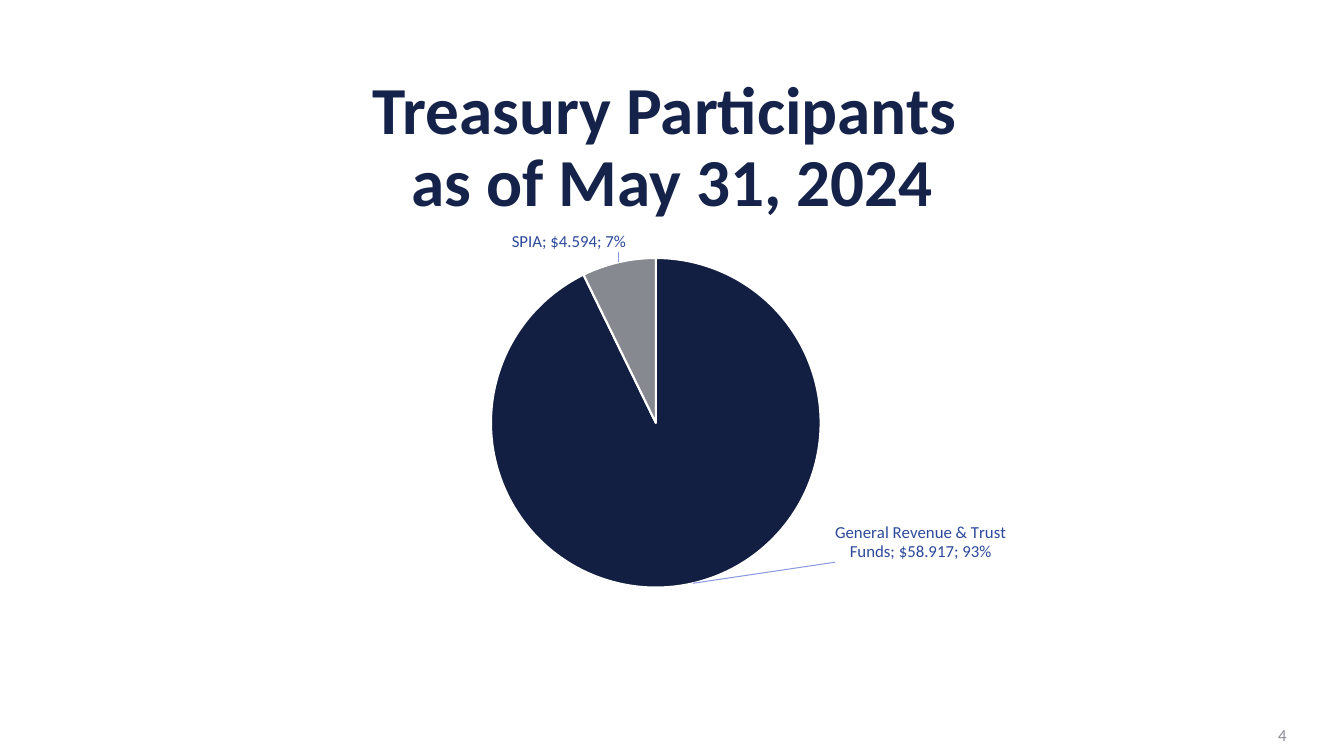
from pptx import Presentation
from pptx.chart.data import CategoryChartData
from pptx.dml.color import RGBColor
from pptx.enum.chart import XL_CHART_TYPE, XL_LABEL_POSITION
from pptx.enum.text import MSO_ANCHOR, PP_ALIGN
from pptx.oxml import parse_xml
from pptx.oxml.ns import nsdecls
from pptx.util import Inches, Pt

PIE = XL_CHART_TYPE.PIE
BEST_FIT = XL_LABEL_POSITION.BEST_FIT
MIDDLE = MSO_ANCHOR.MIDDLE
CENTER, RIGHT = PP_ALIGN.CENTER, PP_ALIGN.RIGHT

FONT = "Calibri"
COLORS = {"title": "15234A", "funds": "131F42", "spia": "878991",
          "label": "2C499B", "leader": "8C9BE0", "number": "8C8D96",
          "white": "FFFFFF"}

# name, value in billions, share, colour, label shift and label size
# (both as shares of the chart)
PARTICIPANTS = [
    ("General Revenue & Trust Funds", 58.92, 0.928, "funds", (0.16, -0.15), (0.17, 0.14)),
    ("SPIA", 4.59, 0.072, "spia", (0.01, -0.01), (0.16, 0.06)),
]
# Values are rounded to two decimals; the labels state three
AMOUNT_FORMAT = '[>10]"$58.917";"$4.594"'


def rgb(name):
    return RGBColor.from_string(COLORS[name])


def style(font, size, color, bold=False):
    font.name, font.size, font.bold = FONT, Pt(size), bold
    font.color.rgb = rgb(color)


def add_text(slide, box, lines, size, color, align, bold=False, spacing=1.0):
    frame = slide.shapes.add_textbox(*map(Inches, box)).text_frame
    frame.word_wrap = True
    frame.vertical_anchor = MIDDLE
    paragraph = frame.paragraphs[0]
    paragraph.alignment = align
    paragraph.line_spacing = spacing
    for index, line in enumerate(lines):
        if index:
            paragraph.add_line_break()
        run = paragraph.add_run()
        run.text = line
        style(run.font, size, color, bold)


def manual_layout(x, y, size=None):
    """Chart layout element: a shift alone, or an inner plot box with a size."""
    inner = modes = extent = ""
    if size:
        inner = '<c:layoutTarget val="inner"/>'
        modes = '<c:xMode val="edge"/><c:yMode val="edge"/>'
        extent = f'<c:w val="{size[0]}"/><c:h val="{size[1]}"/>'
    return parse_xml(
        f'<c:layout {nsdecls("c")}><c:manualLayout>{inner}{modes}'
        f'<c:x val="{x}"/><c:y val="{y}"/>{extent}</c:manualLayout></c:layout>')


def label_extent(width, height):
    """Extension that fixes the size of a moved data label."""
    return parse_xml(
        f'<c:extLst {nsdecls("c")}>'
        '<c:ext uri="{CE6537A1-D6FC-4f65-9D91-7224C49458BB}" '
        'xmlns:c15="http://schemas.microsoft.com/office/drawing/2012/chart">'
        f'<c15:layout><c:manualLayout><c:w val="{width}"/><c:h val="{height}"/>'
        '</c:manualLayout></c15:layout></c:ext></c:extLst>')


def style_slice(point, color):
    point.format.fill.solid()
    point.format.fill.fore_color.rgb = rgb(color)
    point.format.line.color.rgb = rgb("white")
    point.format.line.width = Pt(1.5)


def place_label(label, shift, extent):
    style(label.font, 12, "label")
    label.position = BEST_FIT
    element = label._dLbl
    for flag in ("showVal", "showCatName", "showPercent"):
        element.find(f"{{*}}{flag}").set("val", "1")
    element.find("{*}idx").addnext(manual_layout(*shift))
    element.append(label_extent(*extent))


def style_labels(labels, number_format):
    labels.show_value = True
    labels.number_format, labels.number_format_is_linked = number_format, False
    labels.position = BEST_FIT
    style(labels.font, 12, "label")


def add_participants_pie(slide, box, circle):
    """Place the chart in box, with the pie itself at circle (left, top, diameter)."""
    names, amounts, shares, colors, shifts, extents = zip(*PARTICIPANTS)
    data = CategoryChartData()
    data.categories = names
    data.add_series("Series 1", amounts, AMOUNT_FORMAT)
    data.add_series("Series 2", shares, "0.0%")
    chart = slide.shapes.add_chart(PIE, *map(Inches, box), data).chart
    chart.replace_data(data)  # a new pie takes only its first series
    chart.has_title = chart.has_legend = False
    style(chart.font, 10, "title")

    plot = chart.plots[0]
    plot.vary_by_categories = True
    area = chart._chartSpace.chart.plotArea
    for old in area.findall("{*}layout"):
        area.remove(old)
    left, top, width, height = box
    pie_left, pie_top, diameter = circle
    area.insert(0, manual_layout((pie_left - left) / width, (pie_top - top) / height,
                                 (diameter / width, diameter / height)))

    for series, number_format in zip(plot.series, ("0%", "0.0%")):
        style_labels(series.data_labels, number_format)
        for index, color in enumerate(colors):
            style_slice(series.points[index], color)

    amount_series = plot.series[0]
    labels = amount_series.data_labels
    labels.show_category_name = labels.show_percentage = True
    for index, (shift, extent) in enumerate(zip(shifts, extents)):
        place_label(amount_series.points[index].data_label, shift, extent)
    labels._element.append(parse_xml(
        f'<c:leaderLines {nsdecls("c", "a")}><c:spPr><a:ln w="9525"><a:solidFill>'
        f'<a:srgbClr val="{COLORS["leader"]}"/></a:solidFill></a:ln></c:spPr>'
        '</c:leaderLines>'))


def main():
    deck = Presentation()
    deck.slide_width, deck.slide_height = Inches(13.33), Inches(7.5)
    slide = deck.slides.add_slide(deck.slide_layouts[6])
    add_text(slide, (0.92, 0.75, 11.5, 1.45),
             ["Treasury Participants ", "as of May 31, 2024"],
             48, "title", CENTER, bold=True, spacing=0.9)
    add_participants_pie(slide, (2.3, 2.19, 8.73, 4.42), (4.87, 2.56, 3.27))
    add_text(slide, (9.86, 7.09, 3, 0.4), ["4"], 12, "number", RIGHT)
    deck.save("out.pptx")


if __name__ == "__main__":
    main()
